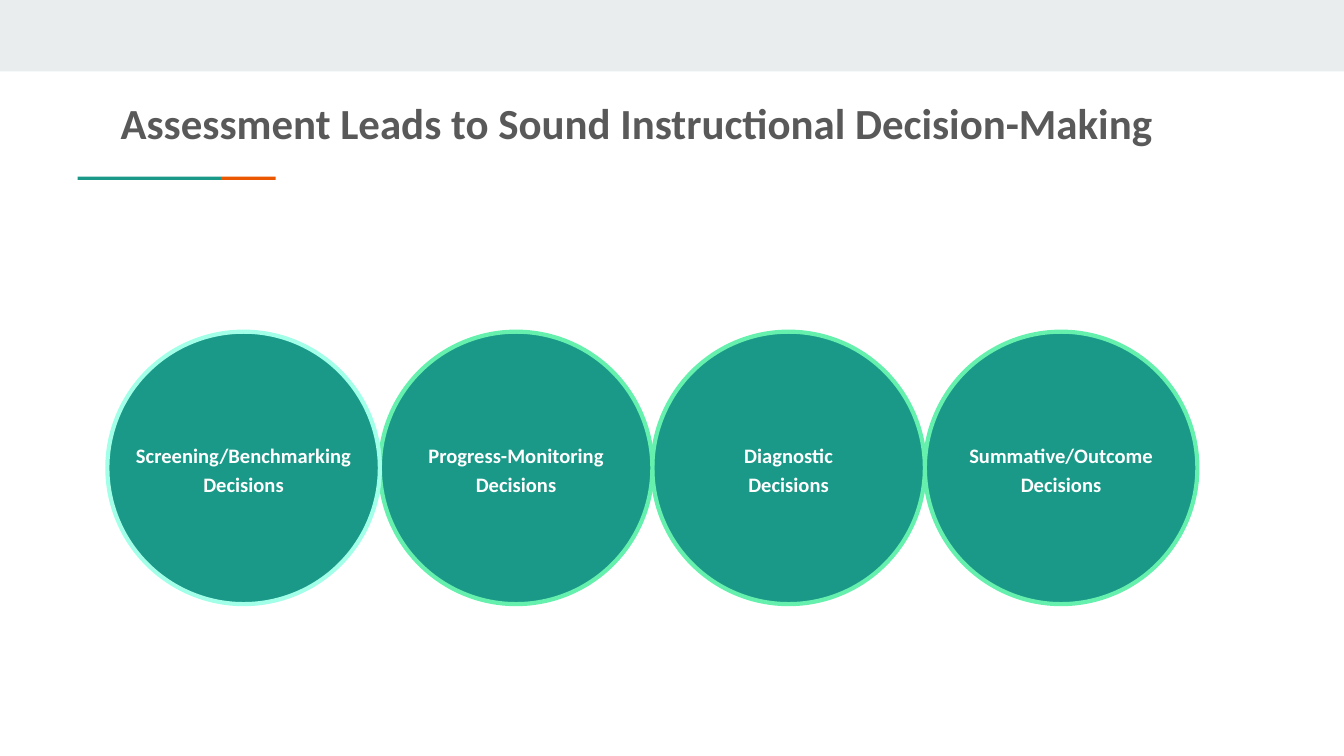
from pptx import Presentation
from pptx.dml.color import RGBColor
from pptx.enum.shapes import MSO_SHAPE
from pptx.enum.text import MSO_ANCHOR, MSO_AUTO_SIZE, PP_ALIGN
from pptx.util import Cm, Pt

WHITE = RGBColor(0xFF, 0xFF, 0xFF)
GRAY = RGBColor(0x59, 0x59, 0x59)
PALE_GRAY = RGBColor(0xE9, 0xED, 0xEE)
TEAL = RGBColor(0x1A, 0x99, 0x88)
ORANGE = RGBColor(0xEB, 0x56, 0x00)
MINT = RGBColor(0x65, 0xF0, 0xAD)
AQUA = RGBColor(0xA2, 0xFF, 0xE8)


def add_filled(kind, left, top, width, height, color):
    shape = slide.shapes.add_shape(kind, Cm(left), Cm(top), Cm(width), Cm(height))
    shape.shadow.inherit = False
    shape.fill.solid()
    shape.fill.fore_color.rgb = color
    shape.line.fill.background()
    return shape


def write_text(shape, text, size, color, align, anchor, spacing):
    frame = shape.text_frame
    frame.text = text
    frame.word_wrap = True
    frame.auto_size = MSO_AUTO_SIZE.NONE
    frame.vertical_anchor = anchor
    frame.margin_left = frame.margin_right = Cm(0.25)
    frame.margin_top = frame.margin_bottom = Cm(0.25)
    for paragraph in frame.paragraphs:
        paragraph.alignment = align
        paragraph.line_spacing = spacing
        for run in paragraph.runs:
            run.font.name = "Calibri"
            run.font.size = Pt(size)
            run.font.bold = True
            run.font.color.rgb = color


prs = Presentation()
prs.slide_width, prs.slide_height = Cm(25.4), Cm(14.29)
slide = prs.slides.add_slide(prs.slide_layouts[5])

add_filled(MSO_SHAPE.RECTANGLE, 0, 0, 25.4, 1.35, PALE_GRAY)
for left, width, color in [(1.47, 2.71, TEAL), (4.18, 1.03, ORANGE)]:
    add_filled(MSO_SHAPE.RECTANGLE, left, 3.34, width, 0.06, color)

title = slide.shapes.title
title.left, title.top, title.width, title.height = Cm(2.03), Cm(1.57), Cm(23.37), Cm(1.5)
write_text(title, "Assessment Leads to Sound Instructional Decision-Making",
           23, GRAY, PP_ALIGN.LEFT, MSO_ANCHOR.TOP, 1.0)

diameter = 5.15
first_left = 2.03
circle_top = 6.27
label_height = 1.45
decisions = [
    ("Screening/Benchmarking\nDecisions", 4.83, AQUA),
    ("Progress-Monitoring\nDecisions", 4.67, MINT),
    ("Diagnostic\nDecisions", 3.58, MINT),
    ("Summative/Outcome\nDecisions", 4.98, MINT),
]
for index, (decision, label_width, outline) in reversed(list(enumerate(decisions))):
    left = first_left + index * diameter
    circle = add_filled(MSO_SHAPE.OVAL, left, circle_top, diameter, diameter, TEAL)
    circle.line.color.rgb = outline
    circle.line.width = Pt(2.25)
    label = slide.shapes.add_textbox(
        Cm(left + (diameter - label_width) / 2),
        Cm(circle_top + (diameter - label_height) / 2),
        Cm(label_width), Cm(label_height))
    write_text(label, decision, 11, WHITE, PP_ALIGN.CENTER, MSO_ANCHOR.MIDDLE, 1.15)

prs.save("out.pptx")
